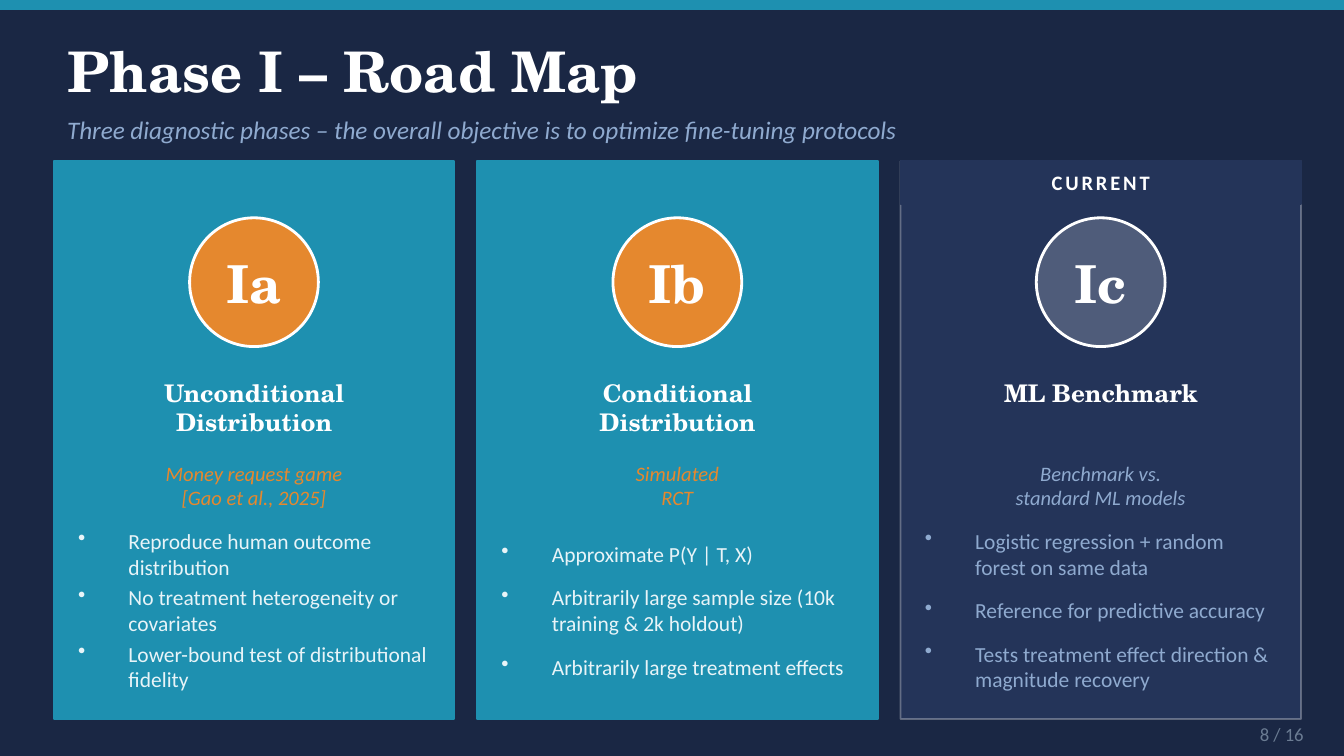
from lxml import etree
from pptx import Presentation
from pptx.dml import color
from pptx.enum import shapes, text
from pptx.oxml import ns
from pptx.util import Pt

SERIF, SANS = "TeX Gyre Schola", "Calibri"
NAVY, PANEL, TEAL, ORANGE = "1A2744", "243459", "1E90B0", "E5882E"
WHITE, ICE, MIST, SLATE = "FFFFFF", "E8F4F8", "8FAACF", "6B7C93"
RECT, OVAL = shapes.MSO_SHAPE.RECTANGLE, shapes.MSO_SHAPE.OVAL
LEFT, CENTER, RIGHT = text.PP_ALIGN.LEFT, text.PP_ALIGN.CENTER, text.PP_ALIGN.RIGHT
TOP, MIDDLE = text.MSO_ANCHOR.TOP, text.MSO_ANCHOR.MIDDLE

PHASES = [
    dict(label="Ia", heading="Unconditional\nDistribution",
         study="Money request game\n[Gao et al., 2025]",
         goals=["Reproduce human outcome distribution",
                "No treatment heterogeneity or covariates",
                "Lower-bound test of distributional fidelity"]),
    dict(label="Ib", heading="Conditional\nDistribution", study="Simulated\nRCT",
         goals=["Approximate P(Y | T, X)",
                "Arbitrarily large sample size (10k training & 2k holdout)",
                "Arbitrarily large treatment effects"]),
    dict(label="Ic", heading="ML Benchmark", study="Benchmark vs.\nstandard ML models",
         goals=["Logistic regression + random forest on same data",
                "Reference for predictive accuracy",
                "Tests treatment effect direction & magnitude recovery"],
         current=True),
]


def rgb(value):
    """Turn a hex string into a colour."""
    return color.RGBColor.from_string(value)


def paint(fill, value, alpha=100):
    """Apply a solid colour with an opacity in percent."""
    fill.solid()
    fill.fore_color.rgb = rgb(value)
    if alpha < 100:
        for tint in fill._xPr.iter(ns.qn("a:srgbClr")):
            etree.SubElement(tint, ns.qn("a:alpha"), val=str(alpha * 1000))


def add_panel(slide, kind, box, fill, line, weight=1, fill_alpha=100, line_alpha=100):
    """Add a flat preset shape."""
    panel = slide.shapes.add_shape(kind, *map(Pt, box))
    panel.shadow.inherit = False
    paint(panel.fill, fill, fill_alpha)
    panel.line.width = Pt(weight)
    paint(panel.line.fill, line, line_alpha)
    return panel


def write(shape, words, size, tone, face=SANS, bold=False, italic=False,
          align=LEFT, anchor=MIDDLE, inset=0, bullet=False):
    """Fill a shape with uniformly styled paragraphs."""
    frame = shape.text_frame
    frame.text = words
    frame.word_wrap = True
    frame.auto_size = text.MSO_AUTO_SIZE.NONE
    frame.vertical_anchor = anchor
    frame.margin_left = frame.margin_right = frame.margin_bottom = 0
    frame.margin_top = Pt(inset)
    for paragraph in frame.paragraphs:
        paragraph.alignment = align
        if bullet:
            props = paragraph._p.get_or_add_pPr()
            props.set("marL", str(Pt(27)))
            props.set("indent", str(-Pt(27)))
            etree.SubElement(props, ns.qn("a:buChar"), char="•")
        font = paragraph.font
        font.name, font.size, font.bold, font.italic = face, Pt(size), bold, italic
        font.color.rgb = rgb(tone)


def add_text(slide, box, words, size, tone, **style):
    """Add a text box."""
    write(slide.shapes.add_textbox(*map(Pt, box)), words, size, tone, **style)


def add_header(slide, left, top, width):
    """Place the accent bar, title and subtitle."""
    add_panel(slide, RECT, (0, 0, 720, 5), TEAL, TEAL)
    title = slide.shapes.title
    title.left, title.top, title.width, title.height = map(Pt, (left, top, width, 39.6))
    write(title, "Phase I – Road Map", 30, WHITE, face=SERIF, bold=True)
    add_text(slide, (left, top + 41, width, 20.2),
             "Three diagnostic phases – the overall objective is to optimize "
             "fine-tuning protocols", 13.5, MIST, italic=True)


def add_current_band(slide, box):
    """Mark the phase in progress with a letter-spaced band."""
    band = add_panel(slide, RECT, box, PANEL, PANEL)
    write(band, "CURRENT", 11, WHITE, bold=True, align=CENTER)
    band.text_frame.paragraphs[0].runs[0]._r.get_or_add_rPr().set("spc", "150")


def add_phase(slide, left, top, width, height, label, heading, study, goals, current=False):
    """Place one phase card in its box."""
    box = left, top, width, height
    if current:
        add_panel(slide, RECT, box, PANEL, WHITE, line_alpha=30)
        add_current_band(slide, (left, top, width, 23))
    else:
        add_panel(slide, RECT, box, TEAL, TEAL)
    size = 69
    badge = add_panel(slide, OVAL, (left + (width - size) / 2, top + 30.3, size, size),
                      WHITE if current else ORANGE, WHITE, 1.5,
                      fill_alpha=20 if current else 100)
    write(badge, label, 28, WHITE, face=SERIF, bold=True, align=CENTER)
    add_text(slide, (left + 7.2, top + 109.4, width - 14.4, 44.6), heading, 13, WHITE,
             face=SERIF, bold=True, align=CENTER, anchor=TOP, inset=6.8)
    add_text(slide, (left + 8.6, top + 158.4, width - 17.2, 30.2), study, 11,
             MIST if current else ORANGE, italic=True, align=CENTER)
    for row, goal in enumerate(goals):
        add_text(slide, (left + 13, top + 195.8 + row * 30.24, width - 26, 28.8), goal,
                 11.5, MIST if current else ICE, bullet=True)


def main():
    """Build and save the road map slide."""
    deck = Presentation()
    deck.slide_width, deck.slide_height = Pt(720), Pt(405)
    slide = deck.slides.add_slide(deck.slide_layouts.get_by_name("Title Only"))
    paint(slide.background.fill, NAVY)
    add_header(slide, 36, 18, 648)
    for column, phase in enumerate(PHASES):
        add_phase(slide, 28.8 + column * 226.8, 86.4, 214.6, 298.8, **phase)
    add_text(slide, (633.6, 385.2, 64.8, 15.8), "8 / 16", 10, SLATE, align=RIGHT)
    deck.save("out.pptx")


if __name__ == "__main__":
    main()
